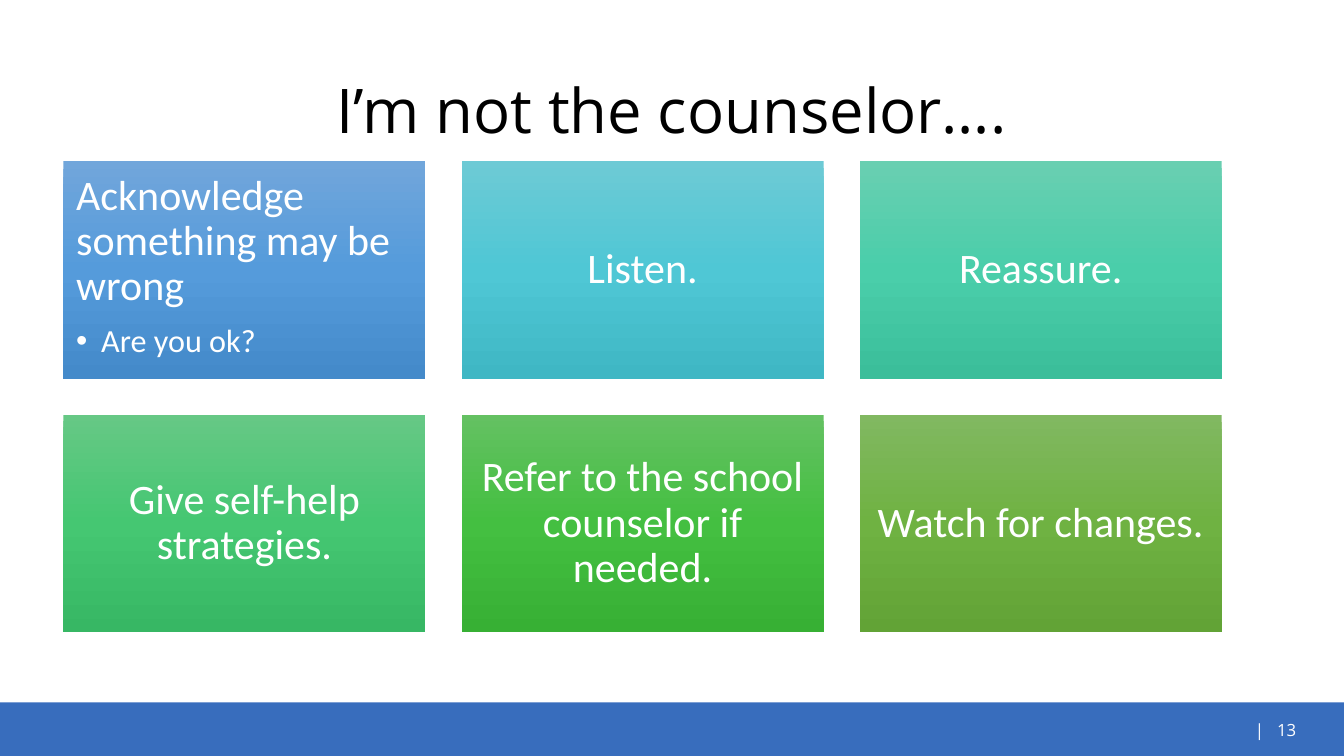
from copy import deepcopy

from lxml.etree import SubElement
from pptx import Presentation
from pptx.dml.color import RGBColor
from pptx.enum.shapes import MSO_SHAPE
from pptx.enum.text import MSO_ANCHOR, PP_ALIGN
from pptx.oxml.ns import qn
from pptx.util import Cm, Pt

SLIDE_W, SLIDE_H = 33.87, 19.05
STEPS = [
    (["Acknowledge something may be wrong", "Are you ok?"], ["71A6DB", "559BDB", "448ACA"]),
    (["Listen."], ["6DCAD5", "4FC7D5", "3FB7C4"]),
    (["Reassure."], ["69CFB1", "4ACEAA", "3BBE9A"]),
    (["Give self-help strategies."], ["66C885", "45C772", "37B764"]),
    (["Refer to the school counselor if needed."], ["64C162", "44BF41", "37B034"]),
    (["Watch for changes."], ["81B861", "6FB242", "62A336"]),
]


def color(value):
    return RGBColor.from_string(value)


def format_paragraph(p, size, font, value, align, spacing=0.9):
    p.alignment = align
    p.line_spacing = spacing
    for r in p.runs:
        r.font.size = Pt(size)
        r.font.name = font
        r.font.color.rgb = color(value)


def add_rect(s, x, y, w, h):
    sp = s.shapes.add_shape(MSO_SHAPE.RECTANGLE, Cm(x), Cm(y), Cm(w), Cm(h))
    sp.shadow.inherit = False
    sp.line.fill.background()
    return sp


def add_label(s, x, y, w, h, text, size, value, align, spacing):
    tf = s.shapes.add_textbox(Cm(x), Cm(y), Cm(w), Cm(h)).text_frame
    tf.word_wrap = True
    tf.vertical_anchor = MSO_ANCHOR.MIDDLE
    tf.text = text
    format_paragraph(tf.paragraphs[0], size, "Open Sans", value, align, spacing)


def fill_gradient(sp, stops):
    sp.fill.gradient()
    sp.fill.gradient_angle = 270
    gs_list = sp._element.spPr.find(".//" + qn("a:gsLst"))
    gs_list.append(deepcopy(gs_list[0]))
    for i, (stop, value) in enumerate(zip(sp.fill.gradient_stops, stops)):
        stop.position = i / 2
        stop.color.rgb = color(value)


def add_bullet(p, indent):
    pPr = p._p.get_or_add_pPr()
    pPr.set("marL", str(indent))
    pPr.set("indent", str(-indent))
    SubElement(pPr, qn("a:buFont")).set("typeface", "Arial")
    SubElement(pPr, qn("a:buChar")).set("char", "•")


def add_step(s, x, y, w, h, lines, stops):
    sp = add_rect(s, x, y, w, h)
    fill_gradient(sp, stops)
    tf = sp.text_frame
    tf.word_wrap = True
    tf.margin_left = tf.margin_right = tf.margin_top = tf.margin_bottom = Cm(0.32)
    has_detail = len(lines) > 1
    tf.vertical_anchor = MSO_ANCHOR.TOP if has_detail else MSO_ANCHOR.MIDDLE
    align = PP_ALIGN.LEFT if has_detail else PP_ALIGN.CENTER
    tf.text = lines[0]
    format_paragraph(tf.paragraphs[0], 30, "Calibri", "FFFFFF", align)
    for detail in lines[1:]:
        tf.paragraphs[-1].space_after = Pt(10.5)
        p = tf.add_paragraph()
        p.text = detail
        p.level = 1
        add_bullet(p, Cm(0.63))
        format_paragraph(p, 23, "Calibri", "FFFFFF", align)


def add_steps(s, x, y, w, h, columns=3, rows=2, gap=0.91):
    step_w = (w - gap * (columns - 1)) / columns
    step_h = (h - gap * (rows - 1)) / rows
    for i, (lines, stops) in enumerate(STEPS):
        row, col = divmod(i, columns)
        add_step(s, x + col * (step_w + gap), y + row * (step_h + gap),
                 step_w, step_h, lines, stops)


def add_footer(s, x, y, w, h):
    sp = add_rect(s, x, y, w, h)
    sp.fill.solid()
    sp.fill.fore_color.rgb = color("386DBD")
    add_label(s, x + w - 8.57, y + 0.18, 7.62, 1.02, "|   13", 12, "FFFFFF",
              PP_ALIGN.RIGHT, 1.0)


def main():
    prs = Presentation()
    prs.slide_width, prs.slide_height = Cm(SLIDE_W), Cm(SLIDE_H)
    s = prs.slides.add_slide(prs.slide_layouts[6])
    add_footer(s, 0, 17.7, SLIDE_W, 1.35)
    add_label(s, 2.33, 1.01, 29.21, 3.68, "I’m not the counselor….", 44, "000000",
              PP_ALIGN.CENTER, 0.9)
    add_steps(s, 1.6, 4.06, 29.19, 11.87)
    prs.save("out.pptx")


if __name__ == "__main__":
    main()
